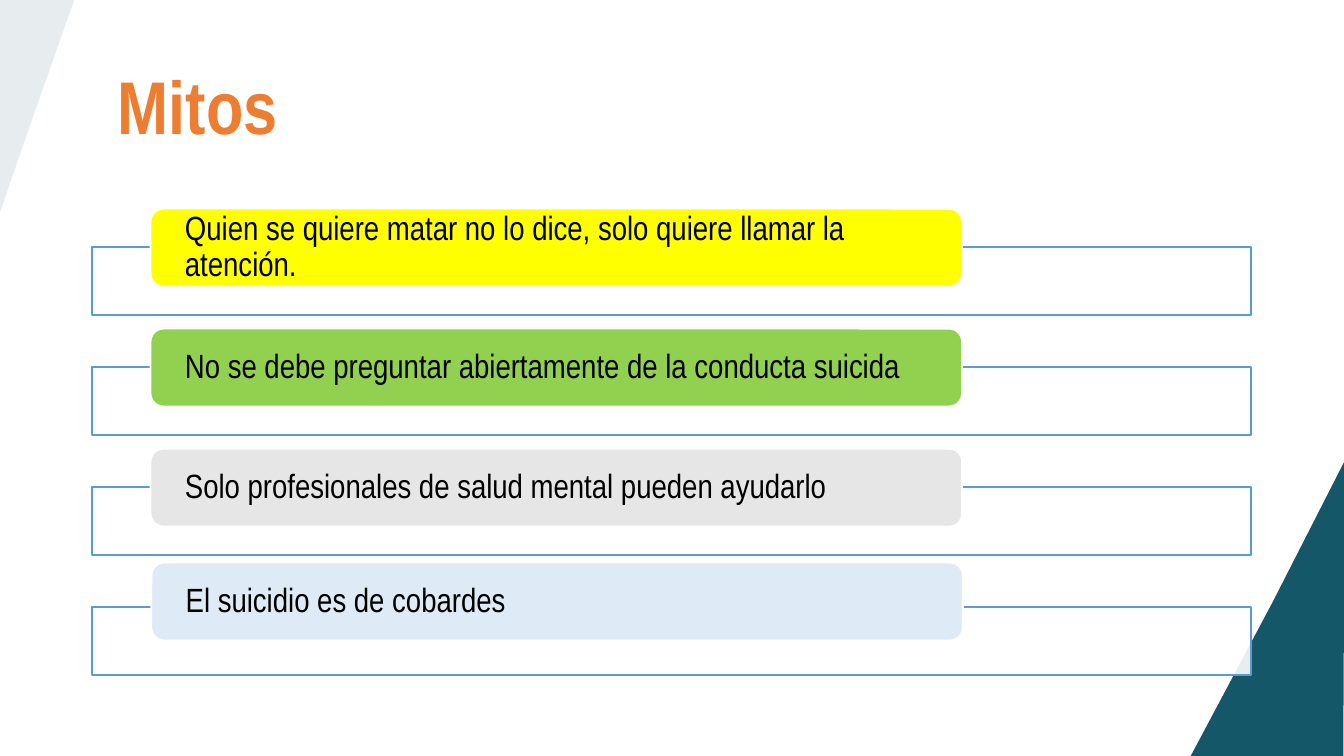
from dataclasses import dataclass

from lxml.etree import SubElement
from pptx import Presentation
from pptx.dml.color import RGBColor
from pptx.enum.shapes import MSO_SHAPE
from pptx.enum.text import MSO_ANCHOR, PP_ALIGN
from pptx.oxml.ns import qn
from pptx.shapes.autoshape import Shape
from pptx.slide import Slide
from pptx.text.text import TextFrame
from pptx.util import Inches, Length, Pt

COLORS = {
    "teal": "145768",
    "orange": "ED7D31",
    "blue": "5B9BD5",
    "white": "FFFFFF",
    "black": "000000",
    "yellow": "FFFF00",
    "green": "92D050",
    "gray": "E7E6E6",
    "pale blue": "DEEBF7",
}
FONT = "Arial Narrow"

# The slide is a grid of square cells, 100 columns by 56.25 rows.
COLUMNS, ROWS = 100, 56.25
CELL = Inches(0.1)

FIRST_BAND_ROW = 18.4
BAND_PITCH = 8.93
LABEL_RISE = 2.88


@dataclass(frozen=True)
class Box:
    column: float
    row: float
    width: float
    height: float


@dataclass(frozen=True)
class Myth:
    text: str
    color: str
    shift_columns: float = 0
    shift_rows: float = 0


@dataclass(frozen=True)
class Corner:
    points: tuple[tuple[float, float], ...]
    opacity: int = 100


MYTHS = (
    Myth("Quien se quiere matar no lo dice, solo quiere llamar la atención.", "yellow"),
    Myth("No se debe preguntar abiertamente de la conducta suicida", "green"),
    Myth("Solo profesionales de salud mental pueden ayudarlo", "gray"),
    Myth("El suicidio es de cobardes", "pale blue", 0.06, -0.45),
)
CORNERS = (
    Corner(((94.7, 44.8), (100, 34.4), (100, 45.5), (99.95, ROWS), (88.6, ROWS))),
    Corner(((2.6, 8.3), (-0.1, 16.1), (-0.1, -0.2), (5.6, -0.2)), opacity=10),
)


def cells(count: float) -> Length:
    return Length(round(count * CELL))


def place(box: Box) -> tuple[Length, Length, Length, Length]:
    return cells(box.column), cells(box.row), cells(box.width), cells(box.height)


def rgb(name: str) -> RGBColor:
    return RGBColor.from_string(COLORS[name])


def paint(shape: Shape, fill: str, line: str | None = None, opacity: int = 100) -> None:
    """Set fill, outline and opacity (in percent), and drop the shadow."""
    shape.shadow.inherit = False
    shape.fill.solid()
    shape.fill.fore_color.rgb = rgb(fill)
    if opacity < 100:
        color = shape.element.spPr.find(qn("a:solidFill"))[0]
        SubElement(color, qn("a:alpha"), val=str(opacity * 1000))
    if line is None:
        shape.line.fill.background()
    else:
        shape.line.color.rgb = rgb(line)
        shape.line.width = Pt(1)


def write(text_frame: TextFrame, text: str, size: int, color: str, bold: bool = False) -> None:
    text_frame.text = text
    text_frame.word_wrap = True
    paragraph = text_frame.paragraphs[0]
    paragraph.alignment = PP_ALIGN.LEFT
    paragraph.line_spacing = 0.9
    font = paragraph.runs[0].font
    font.name = FONT
    font.size = Pt(size)
    font.bold = bold
    font.color.rgb = rgb(color)


def draw_corner(slide: Slide, corner: Corner) -> None:
    start, *others = [(cells(column), cells(row)) for column, row in corner.points]
    builder = slide.shapes.build_freeform(*start)
    builder.add_line_segments(others, close=True)
    paint(builder.convert_to_shape(), "teal", opacity=corner.opacity)


def draw_title(slide: Slide) -> None:
    title = slide.shapes.add_textbox(*place(Box(7.8, 4.7, 21.7, 10.9)))
    write(title.text_frame, "Mitos", 40, "orange", bold=True)


def draw_myth(slide: Slide, index: int, myth: Myth) -> None:
    """Draw the outlined band and the rounded label that overlaps its top edge."""
    row = FIRST_BAND_ROW + index * BAND_PITCH
    band = slide.shapes.add_shape(MSO_SHAPE.RECTANGLE, *place(Box(6.86, row, 86.25, 5.04)))
    paint(band, "white", "blue", opacity=90)

    label_box = Box(11.2 + myth.shift_columns, row - LABEL_RISE + myth.shift_rows, 60.38, 5.8)
    label = slide.shapes.add_shape(MSO_SHAPE.ROUNDED_RECTANGLE, *place(label_box))
    paint(label, myth.color, "white")
    text_frame = label.text_frame
    text_frame.margin_left = text_frame.margin_right = cells(2.28)
    text_frame.margin_top = text_frame.margin_bottom = 0
    text_frame.vertical_anchor = MSO_ANCHOR.MIDDLE
    write(text_frame, myth.text, 18, "black")


def main() -> None:
    presentation = Presentation()
    presentation.slide_width = cells(COLUMNS)
    presentation.slide_height = cells(ROWS)
    slide = presentation.slides.add_slide(presentation.slide_layouts[6])
    for corner in CORNERS:
        draw_corner(slide, corner)
    draw_title(slide)
    for index, myth in enumerate(MYTHS):
        draw_myth(slide, index, myth)
    presentation.save("out.pptx")


if __name__ == "__main__":
    main()
